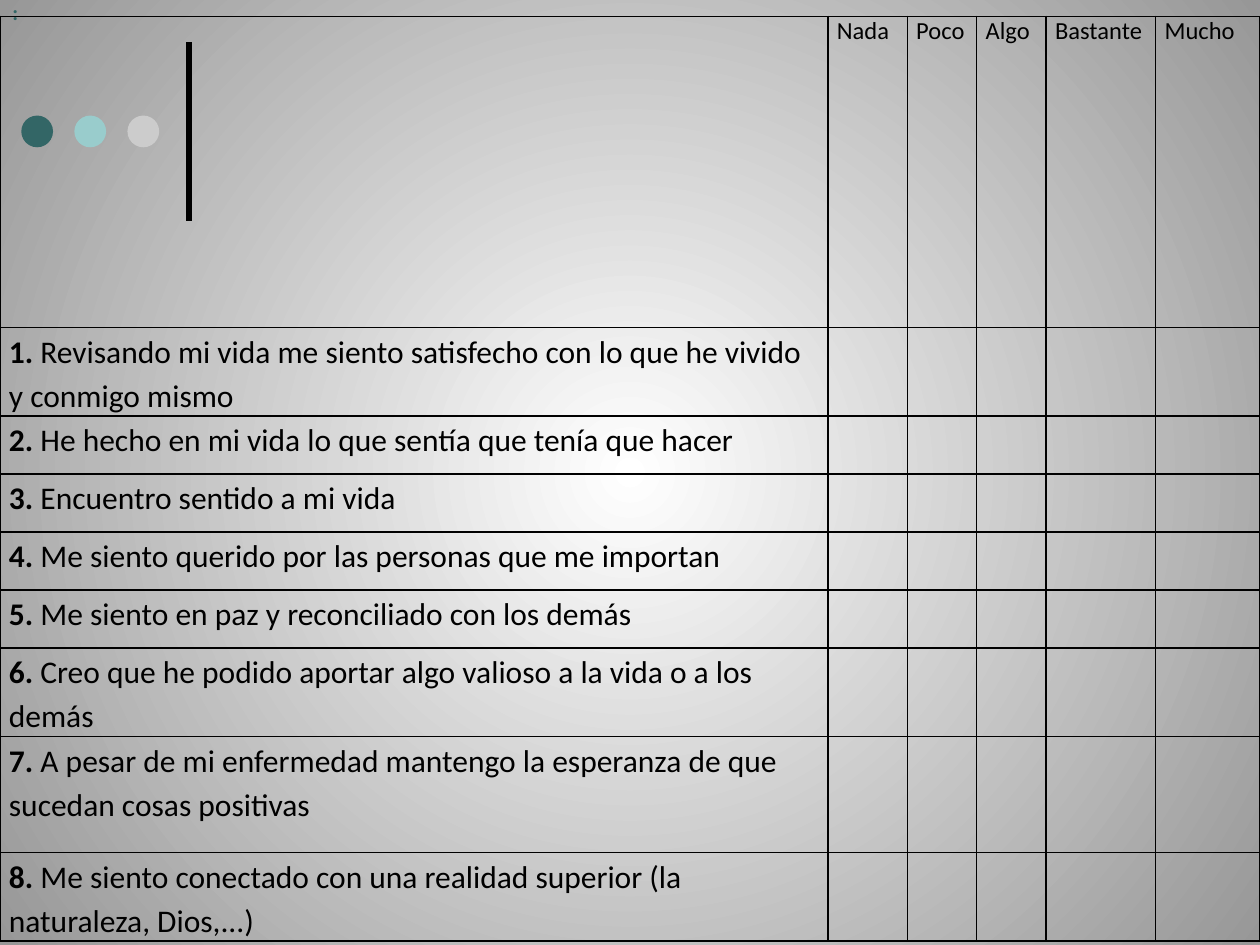
"""Build a slide with a questionnaire table on life satisfaction."""
from lxml.etree import SubElement
from pptx import Presentation
from pptx.dml.color import RGBColor
from pptx.enum.shapes import MSO_CONNECTOR as CONNECTOR, MSO_SHAPE as SHAPE
from pptx.enum.text import MSO_ANCHOR as ANCHOR, MSO_AUTO_SIZE as AUTO_SIZE
from pptx.oxml.ns import qn
from pptx.util import Cm, Pt


def color(value):
    return RGBColor.from_string(value)


def style_run(run, size, bold=False, value="000000"):
    run.font.name = "Calibri"
    run.font.size = Pt(size)
    run.font.bold = bold
    run.font.color.rgb = color(value)


presentation = Presentation()
presentation.slide_width, presentation.slide_height = Cm(25.4), Cm(19.05)
slide = presentation.slides.add_slide(presentation.slide_layouts[6])

background = slide.background.fill
background.gradient()
for stop, value in zip(background.gradient_stops, ("FFFFFF", "979797")):
    stop.color.rgb = color(value)
gradient = slide.element.find(".//" + qn("a:gradFill"))
gradient.remove(gradient.find(qn("a:lin")))
circle = SubElement(gradient, qn("a:path"), path="circle")
SubElement(circle, qn("a:fillToRect"), l="50000", t="50000", r="50000", b="50000")

bar = slide.shapes.add_connector(CONNECTOR.STRAIGHT, Cm(3.81), Cm(4.45), Cm(3.81), Cm(0.84))
bar.line.color.rgb = color("000000")
bar.line.width = Pt(3)
SubElement(bar.element.spPr, qn("a:effectLst"))

for index, value in enumerate(("336666", "99CCCC", "CCCCCC")):
    dot = slide.shapes.add_shape(SHAPE.OVAL, Cm(0.43 + 1.07 * index), Cm(2.33), Cm(0.64), Cm(0.64))
    dot.shadow.inherit = False
    dot.fill.solid()
    dot.fill.fore_color.rgb = color(value)
    dot.line.fill.background()

answers = ["Nada", "Poco", "Algo", "Bastante", "Mucho"]
statements = [
    "Revisando mi vida me siento satisfecho con lo que he vivido y conmigo mismo",
    "He hecho en mi vida lo que sentía que tenía que hacer",
    "Encuentro sentido a mi vida",
    "Me siento querido por las personas que me importan",
    "Me siento en paz y reconciliado con los demás",
    "Creo que he podido aportar algo valioso a la vida o a los demás",
    "A pesar de mi enfermedad mantengo la esperanza de que sucedan cosas positivas",
    "Me siento conectado con una realidad superior (la naturaleza, Dios,...)",
]
widths = [16.69, 1.6, 1.4, 1.4, 2.21, 2.1]
heights = [6.27, 1.75, 1.17, 1.17, 1.17, 1.17, 1.75, 2.34, 1.75]

table = slide.shapes.add_table(
    len(heights), len(widths), Cm(0), Cm(0.33), Cm(25.4), Cm(18.57)
).table
table.first_row = table.horz_banding = False
for column, width in zip(table.columns, widths):
    column.width = Cm(width)
for row, height in zip(table.rows, heights):
    row.height = Cm(height)

for cell in table.iter_cells():
    cell.margin_left = cell.margin_right = Cm(0.18)
    cell.margin_top = cell.margin_bottom = Cm(0)
    properties = cell._tc.get_or_add_tcPr()
    for side in ("a:lnL", "a:lnR", "a:lnT", "a:lnB"):
        border = SubElement(properties, qn(side), w=str(Pt(1)))
        SubElement(SubElement(border, qn("a:solidFill")), qn("a:srgbClr"), val="000000")
    cell.fill.background()

for column_index, answer in enumerate(answers, 1):
    paragraph = table.cell(0, column_index).text_frame.paragraphs[0]
    paragraph.text = answer
    style_run(paragraph.runs[0], 14)

for number, statement in enumerate(statements, 1):
    paragraph = table.cell(number, 0).text_frame.paragraphs[0]
    paragraph.line_spacing = 1.15
    paragraph.text = f"{number}. "
    paragraph.add_run().text = statement
    for run, bold in zip(paragraph.runs, (True, False)):
        style_run(run, 18, bold)

colon = slide.shapes.add_textbox(Cm(0), Cm(-0.13), Cm(0.64), Cm(1.55))
text_frame = colon.text_frame
text_frame.text = ":"
text_frame.word_wrap = False
text_frame.auto_size = AUTO_SIZE.NONE
text_frame.vertical_anchor = ANCHOR.TOP
style_run(text_frame.paragraphs[0].runs[0], 12, True, "336666")

presentation.save("out.pptx")
